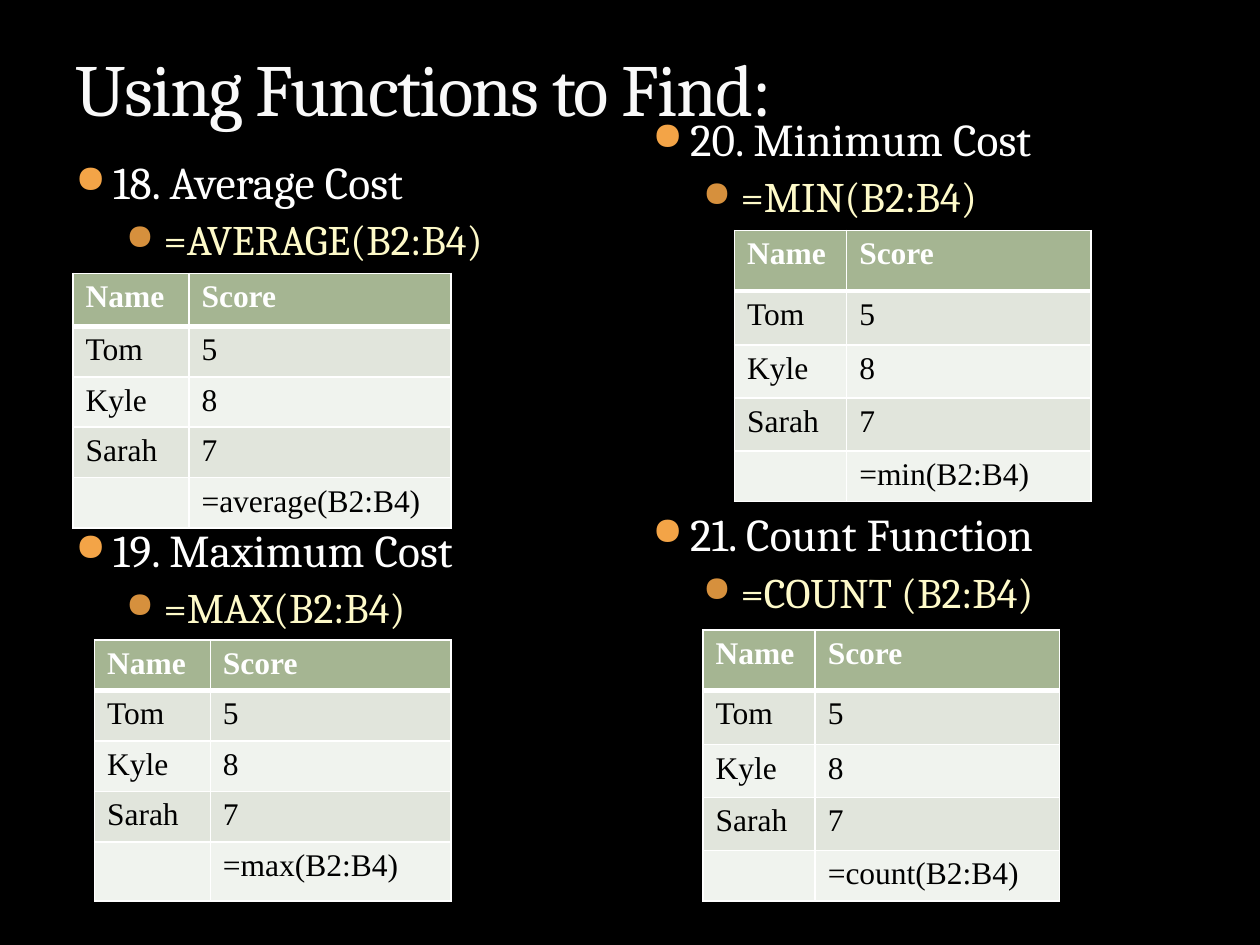
from dataclasses import dataclass

from lxml import etree
from pptx import Presentation
from pptx.dml.color import RGBColor
from pptx.enum.text import MSO_ANCHOR, MSO_AUTO_SIZE, PP_ALIGN
from pptx.oxml.ns import qn
from pptx.util import Inches, Pt

LEFT = PP_ALIGN.LEFT
TOP, BOTTOM = MSO_ANCHOR.TOP, MSO_ANCHOR.BOTTOM
NO_FIT = MSO_AUTO_SIZE.NONE
TITLE_ONLY = 5


@dataclass(frozen=True)
class Theme:
    heading_font: str = "Cambria"
    table_font: str = "Times New Roman"
    background: str = "000000"
    title: str = "F9F9F9"
    topic: str = "FFFFFF"
    formula: str = "FEFAC9"
    topic_bullet: str = "F3A447"
    formula_bullet: str = "D6903D"
    header_fill: str = "A5B592"
    band_fills: tuple = ("E1E5DC", "F0F3EE")
    header_text: str = "FFFFFF"
    cell_text: str = "000000"
    border: str = "FFFFFF"
    title_size: int = 42
    topic_size: int = 26
    formula_size: int = 24
    table_size: int = 18


class SlideBuilder:
    def __init__(self, page, theme):
        self.page = page
        self.theme = theme
        fill = page.background.fill
        fill.solid()
        fill.fore_color.rgb = RGBColor.from_string(theme.background)

    def format_runs(self, para, font, size, color, bold=False):
        for span in para.runs:
            span.font.name = font
            span.font.size = Pt(size)
            span.font.bold = bold
            span.font.color.rgb = RGBColor.from_string(color)

    def title(self, text, left, top, width, height):
        box = self.page.shapes.title
        box.left, box.top = Inches(left), Inches(top)
        box.width, box.height = Inches(width), Inches(height)
        frame = box.text_frame
        frame.text = text
        frame.auto_size = NO_FIT
        frame.vertical_anchor = BOTTOM
        para = frame.paragraphs[0]
        para.alignment = LEFT
        self.format_runs(para, self.theme.heading_font, self.theme.title_size, self.theme.title)
        for span in para.runs:
            span.font._element.set("spc", "-100")

    def bullet(self, para, color, indent):
        """Give the paragraph a hanging round bullet."""
        props = para._p.get_or_add_pPr()
        props.set("marL", str(Inches(indent)))
        props.set("indent", str(Inches(-0.3)))
        bullet_color = etree.SubElement(props, qn("a:buClr"))
        etree.SubElement(bullet_color, qn("a:srgbClr"), val=color)
        etree.SubElement(props, qn("a:buSzPct"), val="85000")
        etree.SubElement(props, qn("a:buChar"), char="●")

    def topics(self, pairs, gap, left, top, width, height):
        """Stack topic and formula pairs, leaving a gap in points for each table."""
        theme = self.theme
        box = self.page.shapes.add_textbox(
            Inches(left), Inches(top), Inches(width), Inches(height))
        frame = box.text_frame
        frame.word_wrap = True
        frame.vertical_anchor = TOP
        frame.text = "\n".join(line for pair in pairs for line in pair)
        for index, para in enumerate(frame.paragraphs):
            if index % 2:
                para.level = 1
                para.space_before = Pt(3)
                self.bullet(para, theme.formula_bullet, 0.7)
                self.format_runs(para, theme.heading_font, theme.formula_size, theme.formula)
            else:
                para.space_before = Pt(gap if index else 6)
                self.bullet(para, theme.topic_bullet, 0.3)
                self.format_runs(para, theme.heading_font, theme.topic_size, theme.topic)

    def borders(self, cell, widths):
        """Draw cell borders; widths are points for left, right, top, bottom."""
        props = cell._tc.get_or_add_tcPr()
        for side, width in zip("LRTB", widths):
            line = etree.SubElement(props, qn(f"a:ln{side}"), w=str(Pt(width)))
            fill = etree.SubElement(line, qn("a:solidFill"))
            etree.SubElement(fill, qn("a:srgbClr"), val=self.theme.border)

    def score_table(self, formula, left, top, columns, rows):
        theme = self.theme
        values = [("Name", "Score"), *SCORES, ("", formula)]
        table = self.page.shapes.add_table(
            len(rows), len(columns), Inches(left), Inches(top),
            Inches(sum(columns)), Inches(sum(rows))).table
        for column, width in zip(table.columns, columns):
            column.width = Inches(width)
        for row_index, (row, height) in enumerate(zip(table.rows, rows)):
            row.height = Inches(height)
            header = row_index == 0
            fill = theme.header_fill if header else theme.band_fills[(row_index - 1) % 2]
            color = theme.header_text if header else theme.cell_text
            widths = (1, 1, 3 if row_index == 1 else 1, 3 if header else 1)
            for cell, text in zip(row.cells, values[row_index]):
                self.borders(cell, widths)
                cell.fill.solid()
                cell.fill.fore_color.rgb = RGBColor.from_string(fill)
                cell.text = text
                self.format_runs(cell.text_frame.paragraphs[0], theme.table_font,
                                 theme.table_size, color, header)


SCORES = [("Tom", "5"), ("Kyle", "8"), ("Sarah", "7")]
RIGHT_COLUMNS = (0.89, 1.94)
RIGHT_ROWS = (0.48, 0.43, 0.42, 0.42, 0.33)


def main():
    deck = Presentation()
    deck.slide_width, deck.slide_height = Inches(10), Inches(7.5)
    page = deck.slides.add_slide(deck.slide_layouts[TITLE_ONLY])
    builder = SlideBuilder(page, Theme())

    # Title
    builder.title("Using Functions to Find:", 0.5, 0.17, 9, 0.92)

    # Topic columns
    builder.topics([("18. Average Cost", "=AVERAGE(B2:B4)"),
                    ("19. Maximum Cost", "=MAX(B2:B4)")], 147.5, 0.5, 1.17, 4.44, 5.5)
    builder.topics([("20. Minimum Cost", "=MIN(B2:B4)"),
                    ("21. Count Function", "=COUNT (B2:B4)")], 163, 5.08, 0.83, 4.44, 5.83)

    # Worked examples
    builder.score_table("=average(B2:B4)", 0.58, 2.17, (0.92, 2.08),
                        (0.42, 0.39, 0.38, 0.37, 0.38))
    builder.score_table("=max(B2:B4)", 0.75, 5.08, (0.92, 1.91),
                        (0.38, 0.39, 0.38, 0.38, 0.47))
    builder.score_table("=min(B2:B4)", 5.83, 1.83, RIGHT_COLUMNS, RIGHT_ROWS)
    builder.score_table("=count(B2:B4)", 5.58, 5, RIGHT_COLUMNS, RIGHT_ROWS)

    deck.save("out.pptx")


if __name__ == "__main__":
    main()
